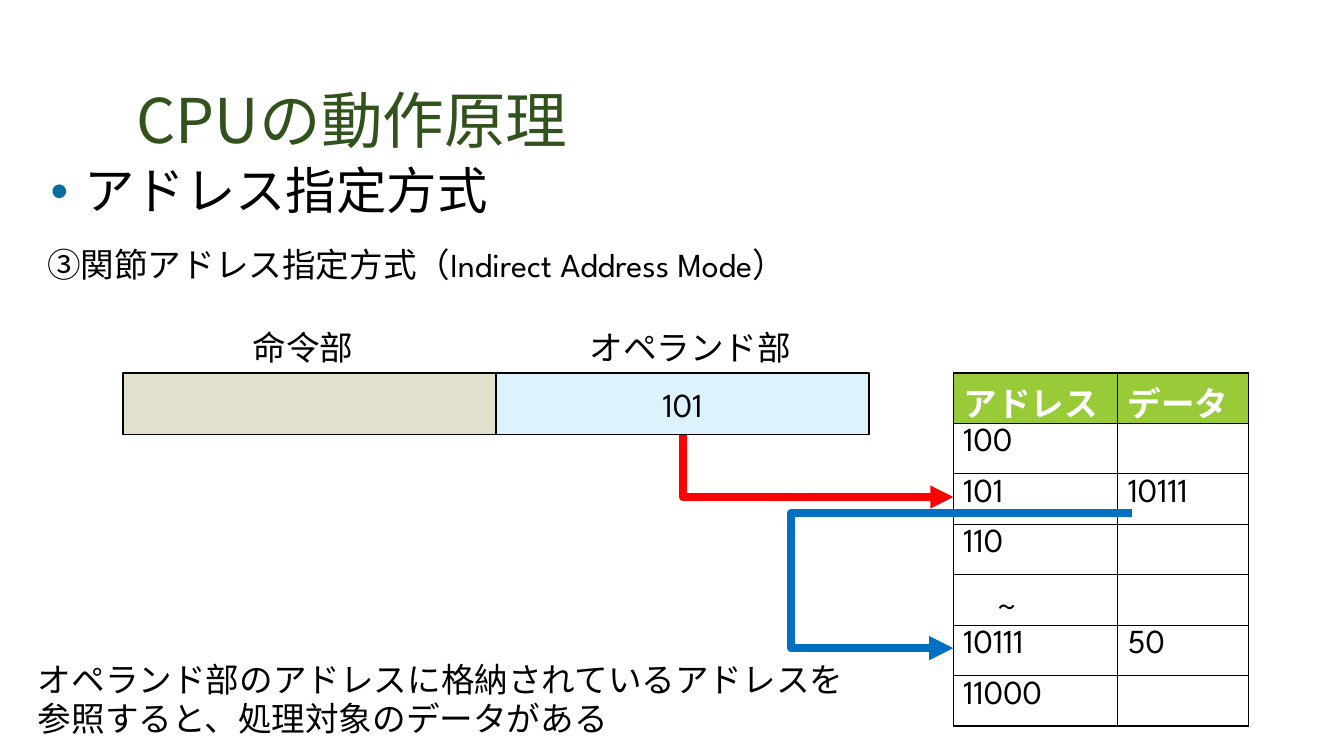
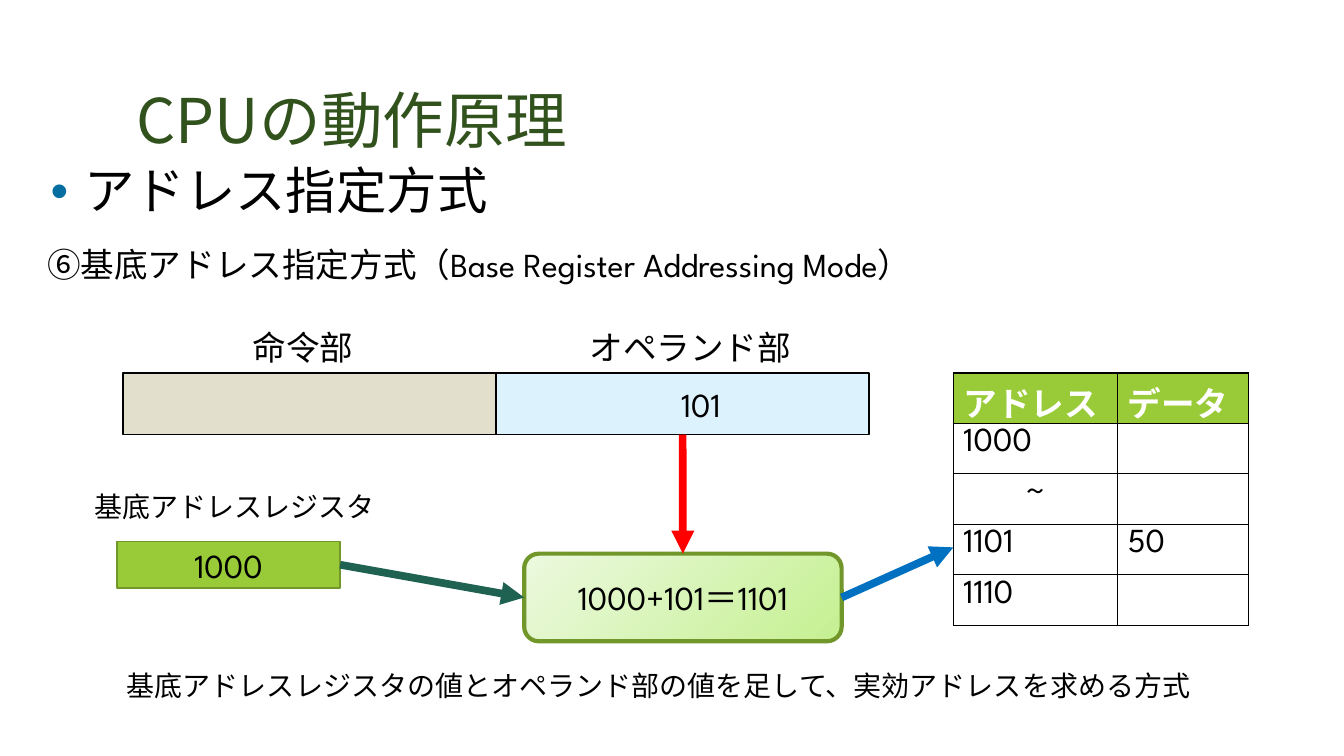
from lxml.etree import SubElement
from pptx import Presentation
from pptx.dml.color import RGBColor
from pptx.enum.shapes import MSO_CONNECTOR, MSO_SHAPE
from pptx.enum.text import MSO_ANCHOR, PP_ALIGN
from pptx.oxml import parse_xml
from pptx.oxml.ns import nsdecls, qn
from pptx.util import Pt

TITLE = "CPUの動作原理"
TOPIC = "アドレス指定方式"
INDIRECT_HEADING = "③関節アドレス指定方式（Indirect Address Mode）"
INDIRECT_NOTE = [
    "オペランド部のアドレスに格納されているアドレスを",
    "参照すると、処理対象のデータがある",
]
BASE_HEADING = "⑥基底アドレス指定方式（Base Register Addressing Mode）"
BASE_NOTE = "基底アドレスレジスタの値とオペランド部の値を足して、実効アドレスを求める方式"
MEMORY_HEADER = ("アドレス", "データ")
INDIRECT_MEMORY = [("100", ""), ("101", "10111"), ("110", ""), ("　~", ""),
                   ("10111", "50"), ("11000", "")]
BASE_MEMORY = [("1000", ""), ("~", ""), ("1101", "50"), ("1110", "")]

LATIN, JAPANESE = "League Spartan", "Noto Sans CJK JP"
BLACK, WHITE, DARK_GREEN, BULLET_BLUE = "000000", "FFFFFF", "31521C", "056EA0"
SAND, PALE_BLUE, LIME, OLIVE = "E2DFCC", "DCF3FE", "99CB38", "719629"
RED, BLUE, TEAL = "FF0000", "0070C0", "206252"
SUM_LIGHT, SUM_DARK = "ECF9DF", "C5F092"

FIELD_LEFT, FIELD_TOP, FIELD_WIDTH, FIELD_HEIGHT = 88, 266.4, 266.4, 44
FIELD_BOTTOM = FIELD_TOP + FIELD_HEIGHT
OPERAND_LEFT = FIELD_LEFT + FIELD_WIDTH
OPERAND_CENTER = OPERAND_LEFT + FIELD_WIDTH / 2
TABLE_LEFT, COLUMN_WIDTHS = 681, (117.4, 93.6)
ROW_HEIGHT, ROW_MINIMUM = 36, 29.2


def color(hex_string):
    return RGBColor.from_string(hex_string)


def write(frame, text, size=24, ink=BLACK, latin=LATIN, bold=False, align=PP_ALIGN.LEFT,
          anchor=MSO_ANCHOR.TOP, spacing=None, before=None, indent=0):
    """Fill a text frame; a list gives one paragraph per item."""
    frame.word_wrap = True
    frame.vertical_anchor = anchor
    lines = [text] if isinstance(text, str) else text
    for index, line in enumerate(lines):
        paragraph = frame.add_paragraph() if index else frame.paragraphs[0]
        paragraph.alignment = align
        paragraph.line_spacing = spacing
        if before:
            paragraph.space_before = Pt(before)
        if indent:
            paragraph._p.get_or_add_pPr().set("marL", str(Pt(indent)))
        run = paragraph.add_run()
        run.text = line
        run.font.size = Pt(size)
        run.font.bold = bold
        run.font.name = latin
        run.font.color.rgb = color(ink)
        SubElement(run._r.get_or_add_rPr(), qn("a:ea"), typeface=JAPANESE)


def add_text(slide, box, text, insets=(7.2, 3.6), **style):
    frame = slide.shapes.add_textbox(*map(Pt, box)).text_frame
    frame.margin_left = frame.margin_right = Pt(insets[0])
    frame.margin_top = frame.margin_bottom = Pt(insets[1])
    write(frame, text, **style)
    return frame


def add_box(slide, box, text="", fill=None, outline=BLACK, weight=1,
            kind=MSO_SHAPE.RECTANGLE, align=PP_ALIGN.CENTER, indent=0):
    shape = slide.shapes.add_shape(kind, *map(Pt, box))
    shape.shadow.inherit = False
    if fill:
        shape.fill.solid()
        shape.fill.fore_color.rgb = color(fill)
    shape.line.color.rgb = color(outline)
    shape.line.width = Pt(weight)
    if text:
        write(shape.text_frame, text, align=align, anchor=MSO_ANCHOR.MIDDLE, indent=indent)
    return shape


def add_arrow(slide, start, end, ink, weight=5.5, kind=MSO_CONNECTOR.STRAIGHT):
    connector = slide.shapes.add_connector(kind, *map(Pt, (*start, *end)))
    connector.line.color.rgb = color(ink)
    connector.line.width = Pt(weight)
    SubElement(connector.line._get_or_add_ln(), qn("a:tailEnd"), type="triangle")
    SubElement(connector._element.spPr, qn("a:effectLst"))
    return connector


def add_down_right_arrow(slide, start, end, ink):
    """One-bend arrow: the preset is laid out sideways, then turned 270 degrees."""
    width, height = end[0] - start[0], end[1] - start[1]
    center_x, center_y = start[0] + width / 2, start[1] + height / 2
    connector = add_arrow(slide, (center_x + height / 2, center_y - width / 2),
                          (center_x - height / 2, center_y + width / 2),
                          ink, kind=MSO_CONNECTOR.ELBOW)
    properties = connector._element.spPr
    properties.find(qn("a:xfrm")).set("rot", str(270 * 60000))
    properties.find(qn("a:prstGeom")).set("prst", "bentConnector2")


def add_loop_arrow(slide, start, end, bend_x, ink):
    connector = add_arrow(slide, start, end, ink, 5.75, MSO_CONNECTOR.ELBOW)
    ratio = (bend_x - start[0]) / (end[0] - start[0])
    guides = connector._element.spPr.find(qn("a:prstGeom")).get_or_add_avLst()
    SubElement(guides, qn("a:gd"), name="adj1", fmla=f"val {round(ratio * 100000)}")


def add_borders(cell):
    properties = cell._tc.get_or_add_tcPr()
    for index, side in enumerate(("lnL", "lnR", "lnT", "lnB")):
        properties.insert(index, parse_xml(
            f'<a:{side} {nsdecls("a")} w="{Pt(1)}"><a:solidFill>'
            f'<a:srgbClr val="{BLACK}"/></a:solidFill></a:{side}>'))


def add_memory(slide, rows):
    rows = [MEMORY_HEADER, *rows]
    height = Pt(ROW_HEIGHT * len(rows))
    frame = slide.shapes.add_table(len(rows), len(COLUMN_WIDTHS), Pt(TABLE_LEFT),
                                   Pt(FIELD_TOP), Pt(sum(COLUMN_WIDTHS)), height)
    table = frame.table
    table.horz_banding = False
    for column, width in zip(table.columns, COLUMN_WIDTHS):
        column.width = Pt(width)
    for row_index, row in enumerate(rows):
        table.rows[row_index].height = Pt(ROW_MINIMUM)
        header = row_index == 0
        for column_index, text in enumerate(row):
            cell = table.cell(row_index, column_index)
            cell.fill.solid()
            cell.fill.fore_color.rgb = color(LIME if header else WHITE)
            add_borders(cell)
            if text:
                write(cell.text_frame, text, ink=WHITE if header else BLACK, bold=header,
                      align=PP_ALIGN.CENTER if text == "~" else PP_ALIGN.LEFT)
    frame.height = height


def start_slide(presentation, heading, operand_style):
    """Add the title, topic, heading and instruction word; return slide and operand."""
    slide = presentation.slides.add_slide(presentation.slide_layouts[6])
    add_text(slide, (88, 6, 800, 110), TITLE, insets=(9.6, 4.8), size=44, ink=DARK_GREEN,
             latin=JAPANESE, anchor=MSO_ANCHOR.BOTTOM, spacing=0.85)
    topic = add_text(slide, (26.6, 112.3, 907, 58), TOPIC, insets=(9.6, 4.8), size=36,
                     latin=JAPANESE, spacing=0.95, before=18.7, indent=24)
    properties = topic.paragraphs[0]._p.get_or_add_pPr()
    properties.set("indent", str(-Pt(24)))
    bullet_color = SubElement(properties, qn("a:buClr"))
    SubElement(bullet_color, qn("a:srgbClr"), val=BULLET_BLUE)
    SubElement(properties, qn("a:buFont"), typeface="Arial")
    SubElement(properties, qn("a:buChar"), char="•")
    add_text(slide, (26.6, 170.6, 919, 36), heading)
    add_box(slide, (FIELD_LEFT, FIELD_TOP, FIELD_WIDTH, FIELD_HEIGHT), fill=SAND)
    operand = add_box(slide, (OPERAND_LEFT, FIELD_TOP, FIELD_WIDTH, FIELD_HEIGHT), "101",
                      fill=PALE_BLUE, **operand_style)
    for left, label in ((173.5, "命令部"), (414, "オペランド部")):
        add_text(slide, (left, 231.8, 163, 34.6), label, spacing=0.95)
    return slide, operand


def build_indirect(presentation):
    slide, _ = start_slide(presentation, INDIRECT_HEADING, {})
    add_text(slide, (20, 469.4, 595, 63), INDIRECT_NOTE, spacing=0.95)
    add_memory(slide, INDIRECT_MEMORY)
    add_down_right_arrow(slide, (OPERAND_CENTER, FIELD_BOTTOM), (TABLE_LEFT, 355), RED)
    add_loop_arrow(slide, (808.6, 366.5), (TABLE_LEFT, 463), 565, BLUE)


def build_base_register(presentation):
    slide, operand = start_slide(presentation, BASE_HEADING,
                                 {"align": PP_ALIGN.LEFT, "indent": 125})
    add_text(slide, (83.5, 473.8, 850, 32), BASE_NOTE, size=20)
    add_memory(slide, BASE_MEMORY)
    add_text(slide, (60.5, 347.8, 227, 30), "基底アドレスレジスタ", size=20, spacing=0.95)
    register = add_box(slide, (83.5, 386.8, 159.5, 33.2), "1000", fill=LIME, outline=OLIVE)
    adder = add_box(slide, (374.4, 395.5, 226.8, 62.6), "1000+101＝1101", outline=OLIVE,
                    weight=3, kind=MSO_SHAPE.ROUNDED_RECTANGLE)
    adder.fill.gradient()
    adder.fill.gradient_angle = 315
    for stop, shade in zip(adder.fill.gradient_stops, (SUM_LIGHT, SUM_DARK)):
        stop.color.rgb = color(shade)
    for source, source_site, target_site, ink in ((register, 3, 1, TEAL),
                                                  (operand, 2, 0, RED)):
        arrow = add_arrow(slide, (0, 0), (0, 0), ink)
        arrow.begin_connect(source, source_site)
        arrow.end_connect(adder, target_site)
    result_arrow = add_arrow(slide, (601.2, 426.8), (TABLE_LEFT, 391), BLUE)
    result_arrow.begin_connect(adder, 3)


def main():
    presentation = Presentation()
    presentation.slide_width, presentation.slide_height = Pt(960), Pt(540)
    build_indirect(presentation)
    build_base_register(presentation)
    presentation.save("out.pptx")


if __name__ == "__main__":
    main()
